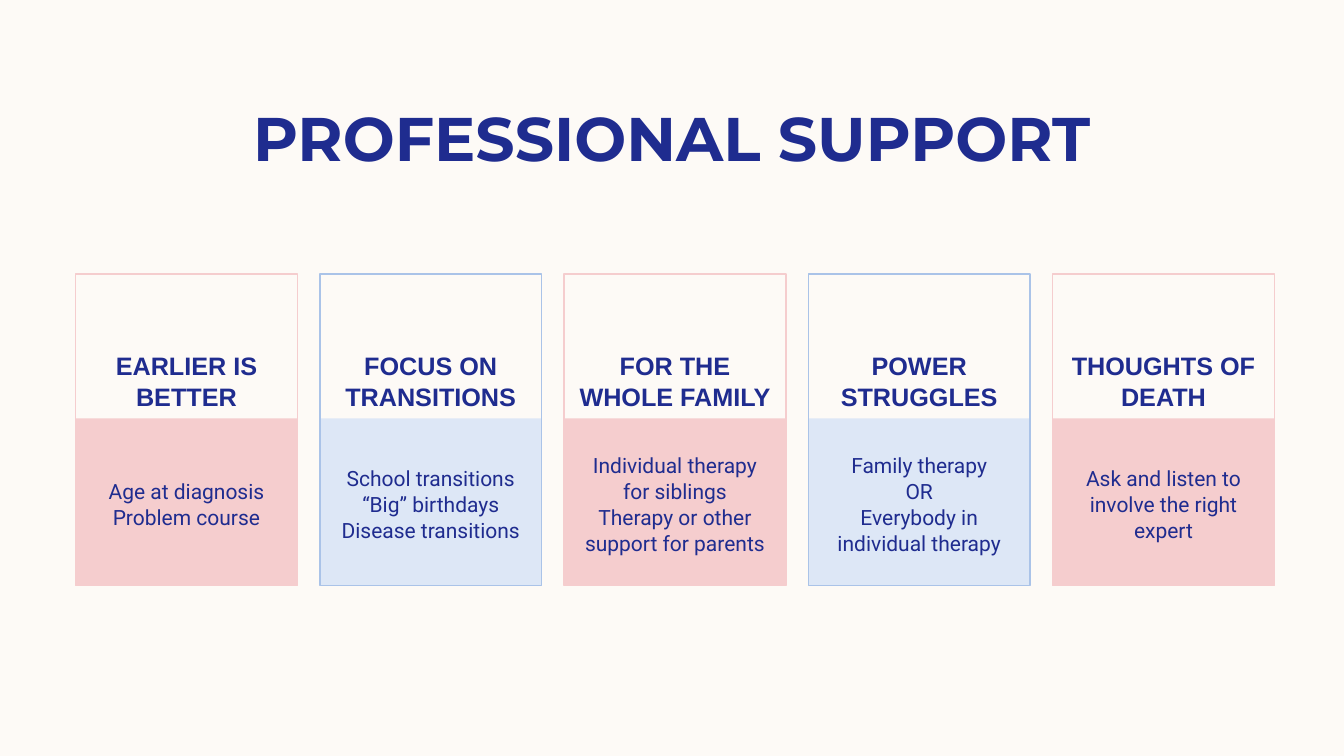
from pptx import Presentation
from pptx import util as u
from pptx.dml.color import RGBColor
from pptx.enum import shapes, text

CREAM = RGBColor(0xFD, 0xFA, 0xF6)
NAVY = RGBColor(0x1F, 0x2C, 0x8F)
PINK = RGBColor(0xF5, 0xCD, 0xCE)
PALE_BLUE = RGBColor(0xDD, 0xE7, 0xF6)
MID_BLUE = RGBColor(0xAA, 0xC3, 0xE8)

TOPICS = [
    ("EARLIER IS BETTER", ["Age at diagnosis", "Problem course"]),
    ("FOCUS ON TRANSITIONS",
     ["School transitions", "“Big” birthdays", "Disease transitions"]),
    ("FOR THE WHOLE FAMILY",
     ["Individual therapy for siblings", "Therapy or other support for parents"]),
    ("POWER STRUGGLES",
     ["Family therapy", "OR", "Everybody in individual therapy"]),
    ("THOUGHTS OF DEATH", ["Ask and listen to involve the right expert"]),
]


class SupportSlide:
    width, height = 13.33, 7.5
    first_column, last_column, card_width = 0.75, 10.44, 2.2
    card_top, band_top, card_bottom = 2.72, 4.15, 5.81
    line_spacing = 1.03

    def __init__(self):
        self.presentation = Presentation()
        self.presentation.slide_width = u.Inches(self.width)
        self.presentation.slide_height = u.Inches(self.height)
        self.slide = self.presentation.slides.add_slide(
            self.presentation.slide_layouts[6])
        background = self.slide.background.fill
        background.solid()
        background.fore_color.rgb = CREAM

    def column(self, index):
        pitch = (self.last_column - self.first_column) / (len(TOPICS) - 1)
        return self.first_column + index * pitch

    def rectangle(self, index, top, fill=None, line=None):
        shape = self.slide.shapes.add_shape(
            shapes.MSO_SHAPE.RECTANGLE, u.Inches(self.column(index)), u.Inches(top),
            u.Inches(self.card_width), u.Inches(self.card_bottom - top))
        shape.shadow.inherit = False
        if fill is None:
            shape.fill.background()
        else:
            shape.fill.solid()
            shape.fill.fore_color.rgb = fill
        if line is None:
            shape.line.fill.background()
        else:
            shape.line.color.rgb = line
            shape.line.width = u.Pt(1)
        return shape

    def set_text(self, shape, lines, font, size, bold=False,
                 anchor=text.MSO_ANCHOR.TOP, top_inset=0.05):
        frame = shape.text_frame
        frame.word_wrap = True
        frame.vertical_anchor = anchor
        frame.margin_left = frame.margin_right = u.Inches(0.1)
        frame.margin_top, frame.margin_bottom = u.Inches(top_inset), u.Inches(0.05)
        frame.text = "\n".join(lines)
        for paragraph in frame.paragraphs:
            paragraph.alignment = text.PP_ALIGN.CENTER
            paragraph.line_spacing = self.line_spacing
            for run in paragraph.runs:
                run.font.name = font
                run.font.size = u.Pt(size)
                run.font.bold = bold
                run.font.color.rgb = NAVY

    def text_box(self, left, top, width, height, lines, font, size, **style):
        box = self.slide.shapes.add_textbox(
            u.Inches(left), u.Inches(top), u.Inches(width), u.Inches(height))
        self.set_text(box, lines, font, size, **style)

    def title(self, wording):
        self.text_box(0.83, 0.92, 11.67, 0.84, [wording], "Montserrat", 44, bold=True)

    def band(self, index):
        self.rectangle(index, self.band_top, fill=(PINK, PALE_BLUE)[index % 2])

    def card(self, index, heading, details):
        frame = self.rectangle(index, self.card_top, line=(PINK, MID_BLUE)[index % 2])
        self.set_text(frame, [heading], "Arial", 18, bold=True, top_inset=0.75)
        self.text_box(self.column(index) + 0.05, self.band_top + 0.1,
                      self.card_width - 0.1, 1.5, details, "Roboto", 15,
                      anchor=text.MSO_ANCHOR.MIDDLE)


def main():
    support = SupportSlide()
    for index in range(len(TOPICS)):
        support.band(index)
    support.title("PROFESSIONAL SUPPORT")
    for index, (heading, details) in enumerate(TOPICS):
        support.card(index, heading, details)
    support.presentation.save("out.pptx")


if __name__ == "__main__":
    main()
